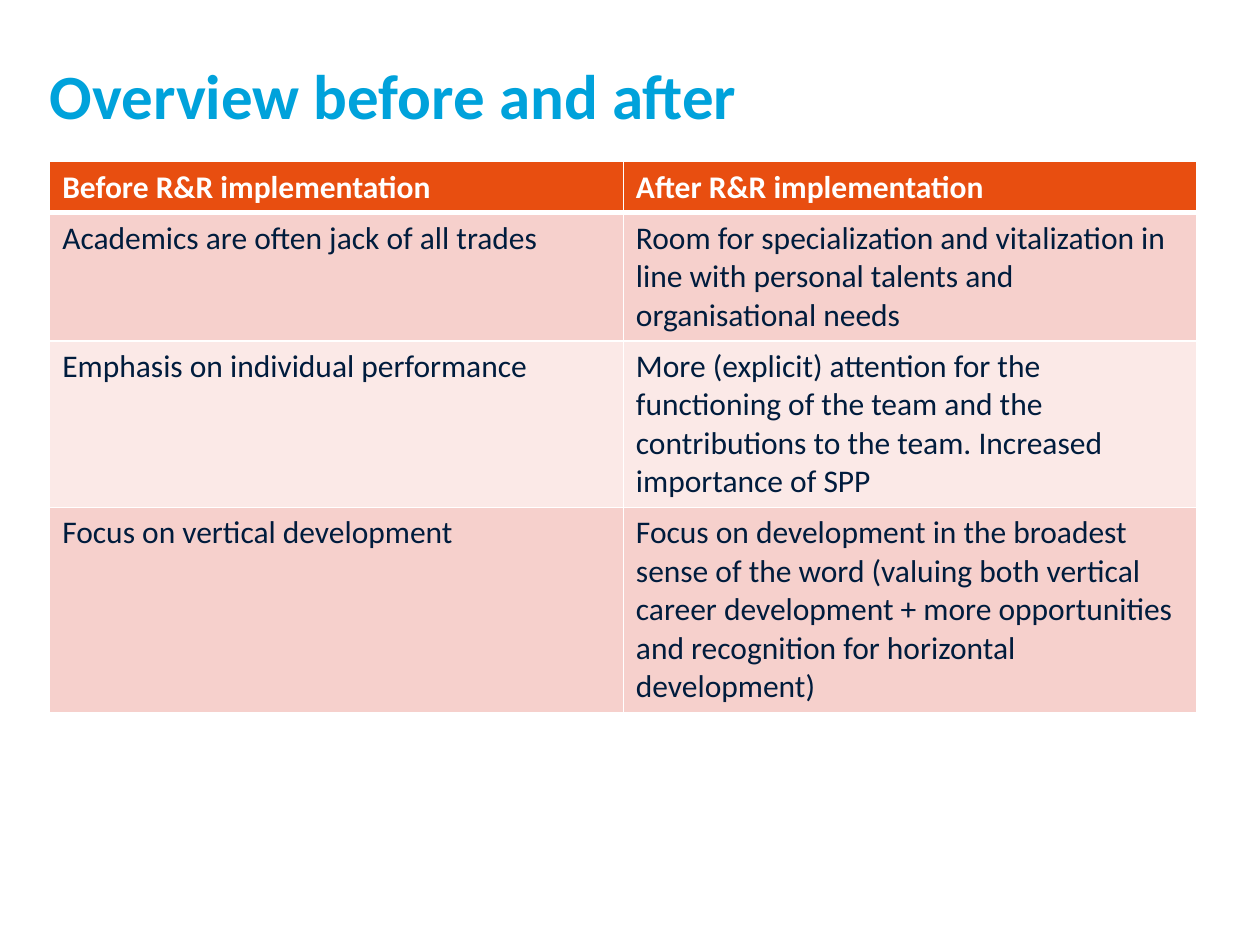
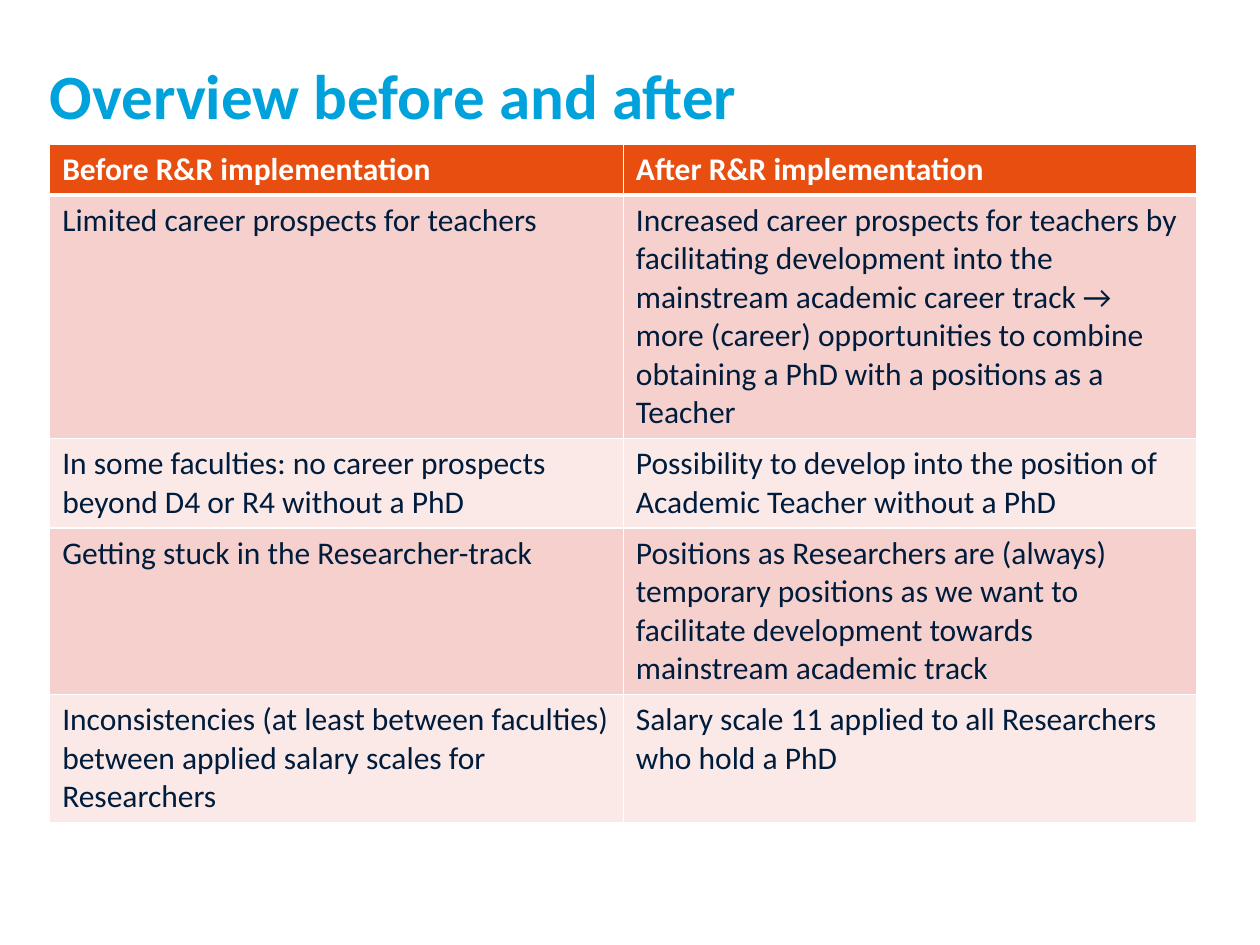
"""Build two slides that compare the state before and after R&R."""
from lxml import etree
from pptx import Presentation
from pptx.dml import color
from pptx.enum import text
from pptx.oxml import ns
from pptx.util import Pt

TITLE = "Overview before and after"
HEAD = ("Before R&R implementation", "After R&R implementation")
PAGES = [
    {"top": 92.4, "rows": [
        (3, "Academics are often jack of all trades",
         "Room for specialization and vitalization in line with personal "
         "talents and organisational needs"),
        (4, "Emphasis on individual performance",
         "More (explicit) attention for the functioning of the team and the "
         "contributions to the team. Increased importance of SPP"),
        (5, "Focus on vertical development",
         "Focus on development in the broadest sense of the word (valuing "
         "both vertical career development + more opportunities and "
         "recognition for horizontal development)"),
    ]},
    {"top": 82.2, "rows": [
        (6, "Limited career prospects for teachers",
         "Increased career prospects for teachers by facilitating "
         "development into the mainstream academic career track → more "
         "(career) opportunities to combine obtaining a PhD with a "
         "positions as a Teacher"),
        (2, "In some faculties: no career prospects beyond D4 or R4 "
         "without a PhD",
         "Possibility to develop into the position of Academic Teacher "
         "without a PhD"),
        (4, "Getting stuck in the Researcher-track",
         "Positions as Researchers are (always) temporary positions as we "
         "want to facilitate development towards mainstream academic track"),
        (3, "Inconsistencies (at least between faculties) between applied "
         "salary scales for Researchers",
         "Salary scale 11 applied to all Researchers who hold a PhD"),
    ]},
]
WHITE, NAVY, BLUE, RED = "FFFFFF", "001C3D", "00A2DB", "E84E10"
BANDS = ("F6D0CC", "FBE9E7")
LEFT, WIDTH = 28.4, 655.6
LINE, PAD = 22, 7.2
FONTS = {
    "title": {"name": "Calibri", "size": Pt(36), "bold": True},
    "head": {"name": "Calibri", "size": Pt(18), "bold": True},
    "cell": {"name": "Calibri", "size": Pt(18), "bold": False},
}


def rgb(code):
    """Turn a hex string into a colour."""
    return color.RGBColor.from_string(code)


def write(frame, words, kind, ink):
    """Put words in a frame with one of the font styles."""
    frame.text = words
    para = frame.paragraphs[0]
    para.alignment = text.PP_ALIGN.LEFT
    for key, val in FONTS[kind].items():
        setattr(para.font, key, val)
    para.font.color.rgb = rgb(ink)


def edge(cell, base):
    """Draw white cell borders, with the given width at the base."""
    props = cell._tc.get_or_add_tcPr()
    for spot, side in enumerate("LRTB"):
        wide = base if side == "B" else 1
        line = etree.Element(ns.qn("a:ln" + side), w=str(Pt(wide)))
        fill = etree.SubElement(line, ns.qn("a:solidFill"))
        etree.SubElement(fill, ns.qn("a:srgbClr"), val=WHITE)
        props.insert(spot, line)


def add_title(slide):
    """Place and style the title."""
    box = slide.shapes.title
    spots = {"left": LEFT, "top": 32.4, "width": WIDTH, "height": 60}
    for key, val in spots.items():
        setattr(box, key, Pt(val))
    frame = box.text_frame
    for side in ("left", "right", "top", "bottom"):
        setattr(frame, "margin_" + side, 0)
    frame.word_wrap = True
    frame.auto_size = text.MSO_AUTO_SIZE.NONE
    frame.vertical_anchor = text.MSO_ANCHOR.TOP
    write(frame, TITLE, "title", BLUE)


def add_grid(slide, page):
    """Add the table, each row as high as its lines of text."""
    rows = [(1, *HEAD), *page["rows"]]
    highs = [PAD + LINE * row[0] for row in rows]
    grid = slide.shapes.add_table(
        len(rows), len(HEAD), Pt(LEFT), Pt(page["top"]),
        Pt(WIDTH), Pt(sum(highs))).table
    for r, (_, *words) in enumerate(rows):
        grid.rows[r].height = Pt(highs[r])
        kind, ink, tint = (("cell", NAVY, BANDS[(r - 1) % 2]) if r
                           else ("head", WHITE, RED))
        for c, word in enumerate(words):
            cell = grid.cell(r, c)
            cell.fill.solid()
            cell.fill.fore_color.rgb = rgb(tint)
            write(cell.text_frame, word, kind, ink)
            edge(cell, 1 if r else 3)


def main():
    """Make and save the deck."""
    deck = Presentation()
    deck.slide_width, deck.slide_height = Pt(720), Pt(540)
    for page in PAGES:
        slide = deck.slides.add_slide(deck.slide_layouts[5])
        add_title(slide)
        add_grid(slide, page)
    deck.save("out.pptx")


if __name__ == "__main__":
    main()
